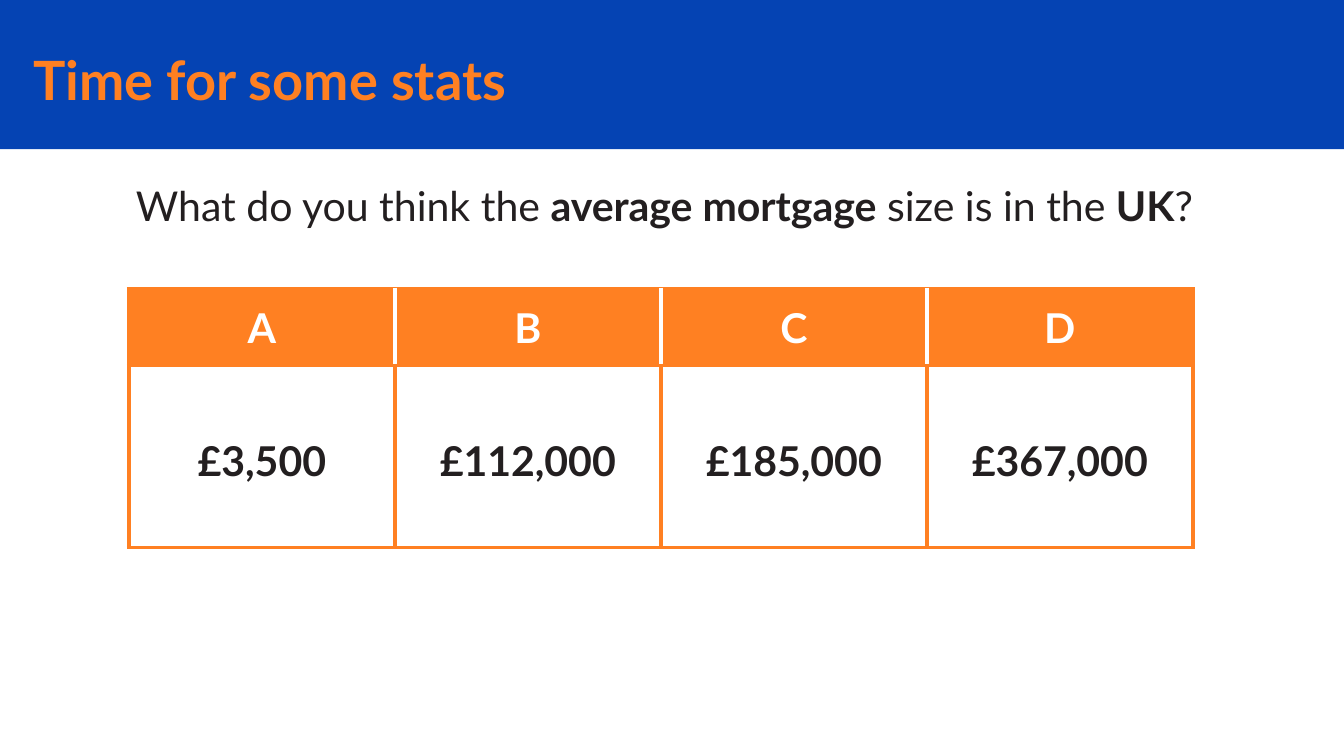
from dataclasses import dataclass

from lxml import etree
from pptx import Presentation
from pptx.dml.color import RGBColor
from pptx.enum import shapes, text
from pptx.oxml import ns
from pptx.util import Pt


@dataclass(frozen=True)
class Theme:
    font: str = "Lato"
    blue: str = "0543B3"
    orange: str = "FF8022"
    ink: str = "231F20"
    white: str = "FFFFFF"
    title_size: float = 29
    body_size: float = 22
    rule: float = 2.25
    inset: float = 7.2


THEME = Theme()
ANSWERS = {"A": "£3,500", "B": "£112,000", "C": "£185,000", "D": "£367,000"}


def write(frame, *runs, size=THEME.body_size, color=THEME.ink,
          align=text.PP_ALIGN.LEFT, spacing=1.0):
    paragraph = frame.paragraphs[0]
    paragraph.alignment = align
    paragraph.line_spacing = spacing
    for words, bold in runs:
        run = paragraph.add_run()
        run.text = words
        run.font.name = THEME.font
        run.font.size = Pt(size)
        run.font.bold = bold
        run.font.color.rgb = RGBColor.from_string(color)


def add_band(slide, width, height):
    band = slide.shapes.add_shape(
        shapes.MSO_SHAPE.RECTANGLE, 0, 0, Pt(width), Pt(height))
    band.shadow.inherit = False
    band.fill.solid()
    band.fill.fore_color.rgb = RGBColor.from_string(THEME.blue)
    band.line.fill.background()


def add_text(slide, left, top, width, height, *runs,
             anchor=text.MSO_ANCHOR.TOP, **style):
    frame = slide.shapes.add_textbox(
        Pt(left), Pt(top), Pt(width), Pt(height)).text_frame
    frame.word_wrap = True
    frame.vertical_anchor = anchor
    frame.margin_left = frame.margin_right = Pt(THEME.inset)
    frame.margin_top = frame.margin_bottom = Pt(THEME.inset)
    write(frame, *runs, **style)


def set_borders(cell, **colors):
    properties = cell._tc.get_or_add_tcPr()
    for side in "LRTB":
        line = etree.SubElement(
            properties, ns.qn(f"a:ln{side}"), w=str(Pt(THEME.rule)))
        fill = etree.SubElement(line, ns.qn("a:solidFill"))
        etree.SubElement(fill, ns.qn("a:srgbClr"),
                         val=colors.get(side, THEME.orange))


def fill_cell(cell, words, color, fill=None, spacing=1.0, **borders):
    cell.margin_left = cell.margin_right = Pt(THEME.inset)
    cell.margin_top = cell.margin_bottom = Pt(THEME.inset)
    cell.vertical_anchor = text.MSO_ANCHOR.MIDDLE
    set_borders(cell, **borders)
    if fill:
        cell.fill.solid()
        cell.fill.fore_color.rgb = RGBColor.from_string(fill)
    else:
        cell.fill.background()
    write(cell.text_frame, (words, True), color=color,
          align=text.PP_ALIGN.CENTER, spacing=spacing)


def add_answers(slide, left, top, column_width, row_heights):
    count = len(ANSWERS)
    answers = slide.shapes.add_table(
        2, count, Pt(left), Pt(top),
        Pt(column_width * count), Pt(sum(row_heights))).table
    answers.first_row = answers.horz_banding = False
    for row, height in zip(answers.rows, row_heights):
        row.height = Pt(height)
    for index, (letter, amount) in enumerate(ANSWERS.items()):
        answers.columns[index].width = Pt(column_width)
        dividers = {}
        if index > 0:
            dividers["L"] = THEME.white
        if index < count - 1:
            dividers["R"] = THEME.white
        fill_cell(answers.cell(0, index), letter, THEME.white,
                  fill=THEME.orange, **dividers)
        fill_cell(answers.cell(1, index), amount, THEME.ink, spacing=1.15)


def main():
    deck = Presentation()
    deck.slide_width, deck.slide_height = Pt(720), Pt(405)
    slide = deck.slides.add_slide(deck.slide_layouts[6])
    add_band(slide, 720, 80)
    add_text(slide, 10.8, 22, 675, 40, ("Time for some stats", True),
             anchor=text.MSO_ANCHOR.MIDDLE, size=THEME.title_size,
             color=THEME.orange)
    add_text(slide, 65.8, 89.5, 609, 121,
             ("What do you think the ", False), ("average mortgage", True),
             (" size is in the ", False), ("UK", True), ("?", False))
    add_answers(slide, 69, 155, 142.5, (40.8, 97.5))
    deck.save("out.pptx")


if __name__ == "__main__":
    main()
